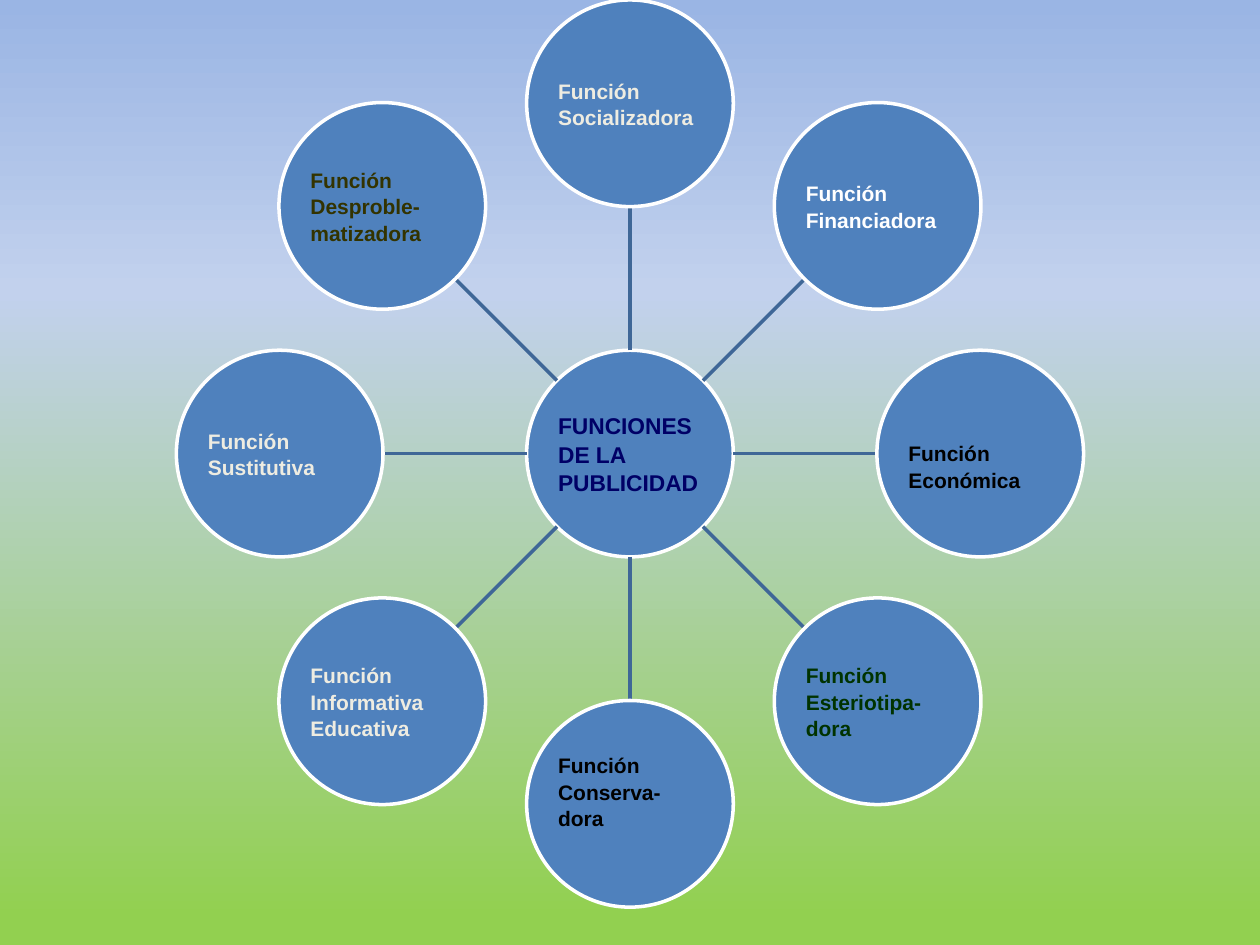
import math
from dataclasses import dataclass

import lxml.etree
import pptx
import pptx.dml.color
import pptx.enum.shapes
import pptx.enum.text
import pptx.oxml.ns
import pptx.util

Inches = pptx.util.Inches
Pt = pptx.util.Pt
qn = pptx.oxml.ns.qn


@dataclass(frozen=True)
class Theme:
    font: str = "Arial"
    hub_size: int = 13
    function_size: int = 12
    line_width: int = 2
    line_spacing: float = 1.05
    circle: str = "4F81BD"
    outline: str = "FFFFFF"
    spoke: str = "3F6797"
    navy: str = "000066"
    cream: str = "EEECE1"
    white: str = "FFFFFF"
    black: str = "000000"
    green: str = "003300"
    olive: str = "333300"
    background: tuple = ((0, "9AB5E4"), (31, "C2D1ED"), (97, "92D050"))


def rgb(value):
    return pptx.dml.color.RGBColor.from_string(value)


class SlideBuilder:
    def __init__(self, slide, theme):
        self.slide = slide
        self.theme = theme

    def paint_background(self):
        """Fill the background with the theme's gradient, from top to bottom."""
        fill = self.slide.background.fill
        fill.gradient()
        gradient = self.slide.background._cSld.find(".//" + qn("a:gradFill"))
        stops = gradient.find(qn("a:gsLst"))
        for stop in list(stops):
            stops.remove(stop)
        for percent, color in self.theme.background:
            stop = lxml.etree.SubElement(stops, qn("a:gs"), pos=str(percent * 1000))
            lxml.etree.SubElement(stop, qn("a:srgbClr"), val=color)
        gradient.find(qn("a:lin")).set("ang", "5400000")

    def add_circle(self, center, radius, lines, size, color, top=0.01, bottom=0.01):
        """Add a labelled circle; top and bottom are the text margins in inches."""
        x, y = center
        shape = self.slide.shapes.add_shape(
            pptx.enum.shapes.MSO_SHAPE.OVAL,
            Inches(x - radius), Inches(y - radius),
            Inches(2 * radius), Inches(2 * radius))
        shape.shadow.inherit = False
        shape.fill.solid()
        shape.fill.fore_color.rgb = rgb(self.theme.circle)
        shape.line.color.rgb = rgb(self.theme.outline)
        shape.line.width = Pt(self.theme.line_width)

        frame = shape.text_frame
        frame.word_wrap = True
        frame.vertical_anchor = pptx.enum.text.MSO_ANCHOR.MIDDLE
        frame.margin_left = frame.margin_right = Inches(0.01)
        frame.margin_top, frame.margin_bottom = Inches(top), Inches(bottom)
        for index, line in enumerate(lines):
            paragraph = frame.add_paragraph() if index else frame.paragraphs[0]
            paragraph.alignment = pptx.enum.text.PP_ALIGN.LEFT
            paragraph.line_spacing = self.theme.line_spacing
            run = paragraph.add_run()
            run.text = line
            run.font.name = self.theme.font
            run.font.size = Pt(size)
            run.font.bold = True
            run.font.color.rgb = rgb(color)

    def add_spoke(self, start, end):
        connector = self.slide.shapes.add_connector(
            pptx.enum.shapes.MSO_CONNECTOR.STRAIGHT,
            *(Inches(length) for length in (*start, *end)))
        connector.line.color.rgb = rgb(self.theme.spoke)
        connector.line.width = Pt(self.theme.line_width)
        properties = connector._element.find(qn("p:spPr"))
        lxml.etree.SubElement(properties, qn("a:effectLst"))


CENTER = (5, 3.6)
CIRCLE_RADIUS = 0.82
RING_RADIUS = 2.78


def point_at(angle, distance):
    """Return the point at a clockwise angle from the top of the wheel."""
    return (CENTER[0] + distance * math.sin(angle),
            CENTER[1] - distance * math.cos(angle))


def main():
    theme = Theme()
    presentation = pptx.Presentation()
    presentation.slide_width = Inches(10)
    presentation.slide_height = Inches(7.5)
    slide = presentation.slides.add_slide(presentation.slide_layouts[6])
    builder = SlideBuilder(slide, theme)
    builder.paint_background()

    builder.add_circle(CENTER, CIRCLE_RADIUS, ["FUNCIONES", "DE LA", "PUBLICIDAD"],
                       theme.hub_size, theme.navy)

    # Clockwise from the top: label lines, text colour, changed margins
    functions = [
        (["Socializadora"], theme.cream, {}),
        (["Financiadora"], theme.white, {}),
        (["Económica"], theme.black, {"top": 0.21}),
        (["Esteriotipa-", "dora"], theme.green, {}),
        (["Conserva-", "dora"], theme.black, {"bottom": 0.21}),
        (["Informativa", "Educativa"], theme.cream, {}),
        (["Sustitutiva"], theme.cream, {}),
        (["Desproble-", "matizadora"], theme.olive, {}),
    ]
    for index, (name_lines, color, margins) in enumerate(functions):
        angle = 2 * math.pi * index / len(functions)
        builder.add_spoke(point_at(angle, CIRCLE_RADIUS),
                          point_at(angle, RING_RADIUS - CIRCLE_RADIUS))
        builder.add_circle(point_at(angle, RING_RADIUS), CIRCLE_RADIUS,
                           ["Función", *name_lines], theme.function_size,
                           color, **margins)

    presentation.save("out.pptx")


if __name__ == "__main__":
    main()
